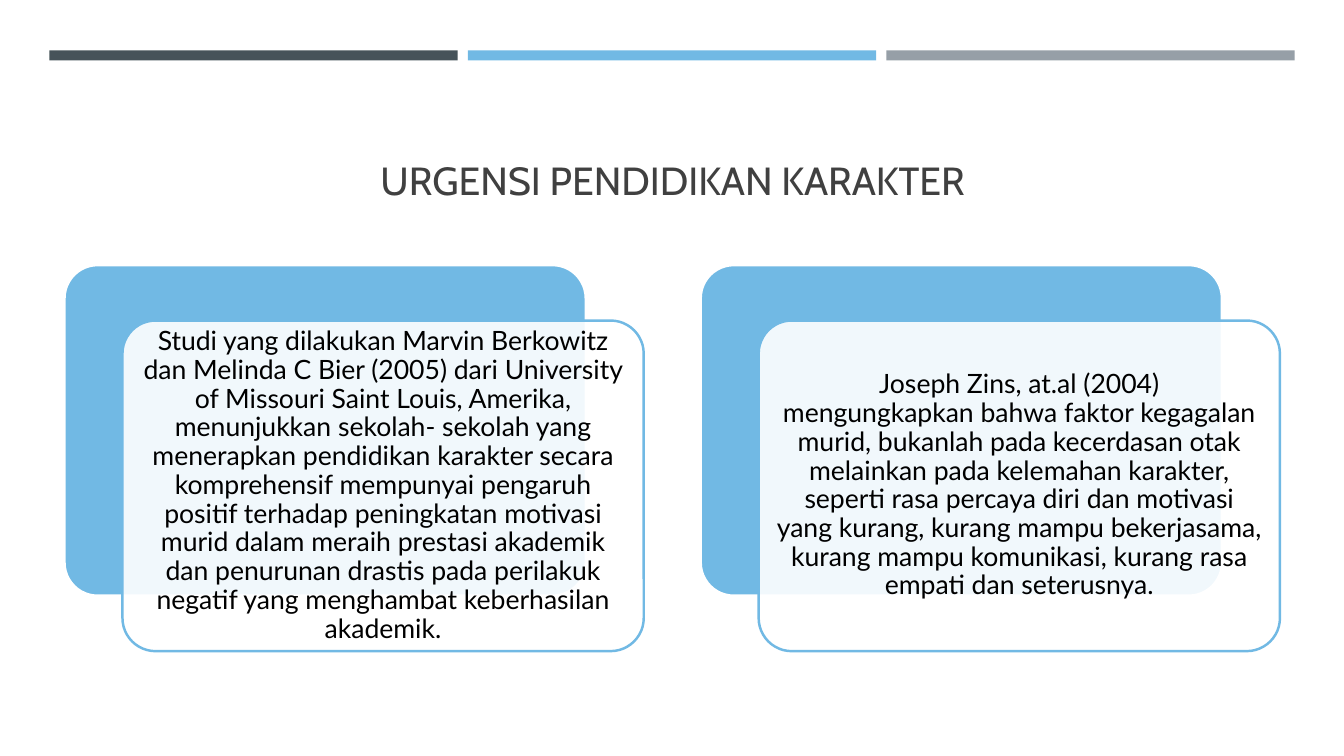
from lxml import etree
from pptx import Presentation
from pptx.dml.color import RGBColor
from pptx.enum import shapes, text
from pptx.oxml import ns
from pptx.util import Inches, Pt

COLORS = {
    "slate": "465359",
    "blue": "71B9E4",
    "gray": "969FA7",
    "white": "FFFFFF",
    "title": "404040",
    "body": "000000",
}
CARD_WIDTH, CARD_HEIGHT = 5.17, 3.28
FINDINGS = [
    "Studi yang dilakukan Marvin Berkowitz dan Melinda C Bier (2005) dari "
    "University of Missouri Saint Louis, Amerika, menunjukkan sekolah- sekolah "
    "yang menerapkan pendidikan karakter secara komprehensif mempunyai pengaruh "
    "positif terhadap peningkatan motivasi murid dalam meraih prestasi akademik "
    "dan penurunan drastis pada perilakuk negatif yang menghambat keberhasilan "
    "akademik.",
    "Joseph Zins, at.al (2004)\vmengungkapkan bahwa faktor kegagalan murid, "
    "bukanlah pada kecerdasan otak melainkan pada kelemahan karakter, seperti "
    "rasa percaya diri dan motivasi yang kurang, kurang mampu bekerjasama, "
    "kurang mampu komunikasi, kurang rasa empati dan seterusnya.",
]


def rgb(name):
    return RGBColor.from_string(COLORS[name])


def style_paragraph(paragraph, font_name, size, color):
    paragraph.alignment = text.PP_ALIGN.CENTER
    paragraph.font.name = font_name
    paragraph.font.size = Pt(size)
    paragraph.font.color.rgb = rgb(color)


def add_block(slide, kind, left, top, width, height, fill, line=None):
    block = slide.shapes.add_shape(
        kind, Inches(left), Inches(top), Inches(width), Inches(height))
    block.shadow.inherit = False
    block.fill.solid()
    block.fill.fore_color.rgb = rgb(fill)
    if line:
        block.line.color.rgb = rgb(line)
        block.line.width = Pt(1.75)
    else:
        block.line.fill.background()
    return block


def add_card(slide, left, top, fill, line):
    card = add_block(slide, shapes.MSO_SHAPE.ROUNDED_RECTANGLE, left, top,
                     CARD_WIDTH, CARD_HEIGHT, fill, line)
    card.adjustments[0] = 0.1
    return card


def set_opacity(shape, percent):
    color = shape.fill._xPr.find(".//" + ns.qn("a:srgbClr"))
    etree.SubElement(color, ns.qn("a:alpha"), val=str(percent * 1000))


def add_finding(slide, left, top, finding):
    """Add a blue card with a translucent text card offset in front of it."""
    add_card(slide, left, top, "blue", "white")
    front = add_card(slide, left + 0.575, top + 0.55, "white", "blue")
    set_opacity(front, 90)
    frame = front.text_frame
    frame.word_wrap = True
    frame.vertical_anchor = text.MSO_ANCHOR.MIDDLE
    frame.margin_left = frame.margin_right = Inches(0.08)
    frame.margin_top = frame.margin_bottom = Inches(0.08)
    frame.text = finding
    paragraph = frame.paragraphs[0]
    paragraph.line_spacing = 0.9
    style_paragraph(paragraph, "Lato", 19, "body")


def set_title(slide, wording):
    title = slide.shapes.title
    title.left, title.top = Inches(0.64), Inches(0.77)
    title.width, title.height = Inches(12.06), Inches(1.3)
    title.text_frame.text = wording
    title.text_frame.vertical_anchor = text.MSO_ANCHOR.BOTTOM
    style_paragraph(title.text_frame.paragraphs[0], "Cabin", 28, "title")


def main():
    deck = Presentation()
    deck.slide_width, deck.slide_height = Inches(13.33), Inches(7.5)
    slide = deck.slides.add_slide(deck.slide_layouts[5])
    for column, color in enumerate(["slate", "blue", "gray"]):
        add_block(slide, shapes.MSO_SHAPE.RECTANGLE,
                  0.49 + column * 4.15, 0.5, 4.05, 0.1, color)
    set_title(slide, "URGENSI PENDIDIKAN KARAKTER")
    for column, finding in enumerate(FINDINGS):
        add_finding(slide, 0.64 + column * 6.31, 2.63, finding)
    deck.save("out.pptx")


if __name__ == "__main__":
    main()
